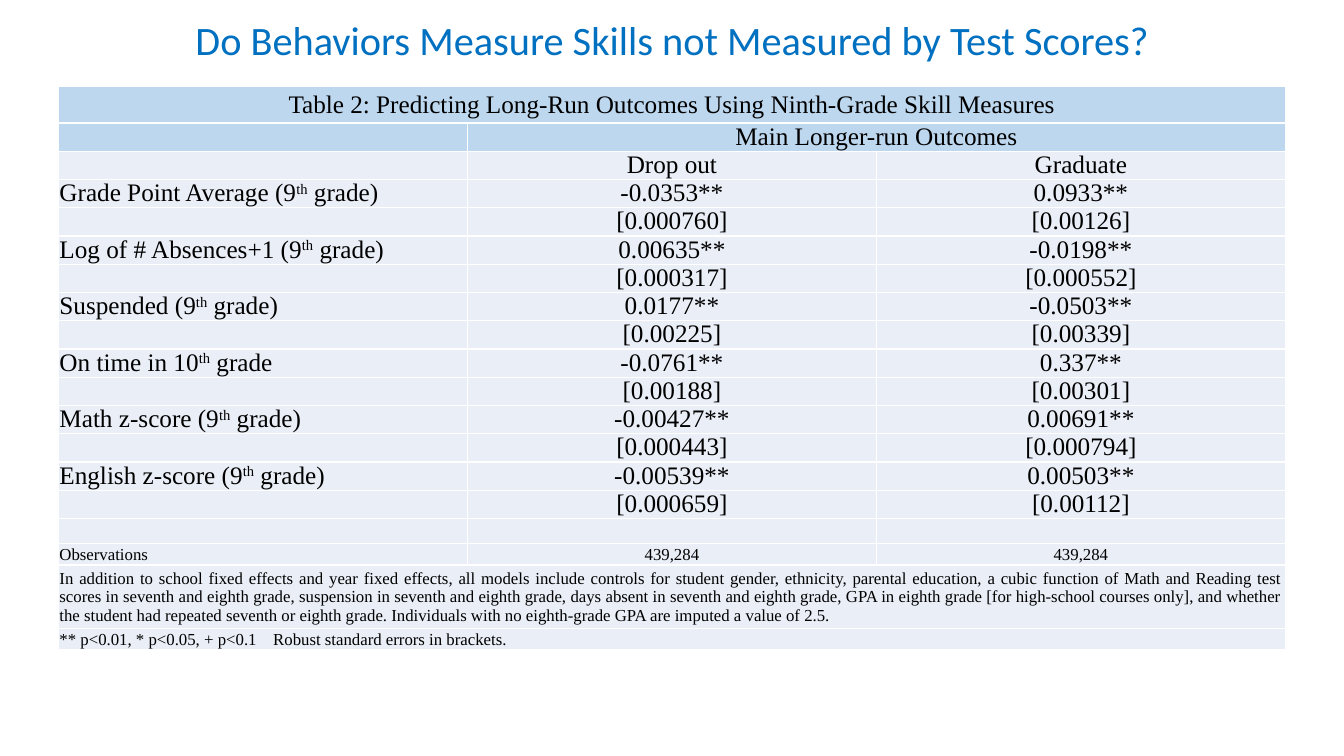
from pptx import Presentation
from pptx.dml.color import RGBColor
from pptx.enum.text import MSO_ANCHOR, PP_ALIGN
from pptx.oxml import parse_xml
from pptx.oxml.ns import nsdecls
from pptx.util import Inches, Pt

LEFT, MID, JUST = PP_ALIGN.LEFT, PP_ALIGN.CENTER, PP_ALIGN.JUSTIFY
MIDDLE = MSO_ANCHOR.MIDDLE
COLORS = {"title": "0070C0", "text": "000000", "line": "FFFFFF",
          "head": "BDD7EE", "body": "EAEFF7"}
SERIF = "Times New Roman"
BIG, SMALL = 18, 12
WIDTH = 12.17

# Label before and after the raised "th", then value and error per outcome
MODELS = [
    ("Grade Point Average (9", " grade)",
     ("-0.0353**", "0.0933**"), ("[0.000760]", "[0.00126]")),
    ("Log of # Absences+1 (9", " grade)",
     ("0.00635**", "-0.0198**"), ("[0.000317]", "[0.000552]")),
    ("Suspended (9", " grade)",
     ("0.0177**", "-0.0503**"), ("[0.00225]", "[0.00339]")),
    ("On time in 10", " grade",
     ("-0.0761**", "0.337**"), ("[0.00188]", "[0.00301]")),
    ("Math z-score (9", " grade)",
     ("-0.00427**", "0.00691**"), ("[0.000443]", "[0.000794]")),
    ("English z-score (9", " grade)",
     ("-0.00539**", "0.00503**"), ("[0.000659]", "[0.00112]")),
]
NOTE = (
    "In addition to school fixed effects and year fixed effects, all models "
    "include controls for student gender, ethnicity, parental education, a "
    "cubic function of Math and Reading test scores in seventh and eighth "
    "grade, suspension in seventh and eighth grade, days absent in seventh "
    "and eighth grade, GPA in eighth grade [for high-school courses only], "
    "and whether the student had repeated seventh or eighth grade. "
    "Individuals with no eighth-grade GPA are imputed a value of 2.5.")
KEY = "** p<0.01, * p<0.05, + p<0.1\tRobust standard errors in brackets."
HEIGHTS = [0.36] + [0.28] * 14 + [0.25, 0.21, 0.63, 0.21]


def add_run(para, text, size, font=SERIF, color="text", base=0):
    run = para.add_run()
    run.text = text
    run.font.size = Pt(size)
    run.font.name = font
    run.font.color.rgb = RGBColor.from_string(COLORS[color])
    if base:
        run.font._element.set("baseline", str(base * 1000))


def add_title(slide, text):
    box = slide.shapes.add_textbox(Inches(0.52), Inches(0.15),
                                   Inches(12.3), Inches(0.54))
    frame = box.text_frame
    frame.word_wrap = True
    frame.vertical_anchor = MIDDLE
    para = frame.paragraphs[0]
    para.alignment = MID
    para.line_spacing = 0.9
    add_run(para, text, 28.8, "Calibri", "title")


def style_cell(cell, fill):
    cell.fill.solid()
    cell.fill.fore_color.rgb = RGBColor.from_string(COLORS[fill])
    cell.vertical_anchor = MIDDLE
    cell.margin_left = cell.margin_top = cell.margin_right = Inches(0.01)
    cell.margin_bottom = 0
    # White borders come before the fill
    props = cell._tc.get_or_add_tcPr()
    for spot, side in enumerate("LRTB"):
        props.insert(spot, parse_xml(
            f'<a:ln{side} {nsdecls("a")} w="12700"><a:solidFill>'
            f'<a:srgbClr val="{COLORS["line"]}"/></a:solidFill></a:ln{side}>'))
    # Keep empty cells from growing their row
    cell.text_frame.paragraphs[0]._p.append(parse_xml(
        f'<a:endParaRPr {nsdecls("a")} sz="{SMALL * 100}"/>'))


def write(cell, text, size=BIG, align=MID, space=0.9):
    para = cell.text_frame.paragraphs[0]
    para.alignment = align
    para.line_spacing = space
    add_run(para, text, size)
    return para


def write_small(cell, text, align=MID):
    return write(cell, text, SMALL, align, 1.0)


def add_grid(slide):
    frame = slide.shapes.add_table(len(HEIGHTS), 3, Inches(0.58), Inches(0.86),
                                   Inches(WIDTH), Inches(sum(HEIGHTS)))
    table = frame.table
    table.first_row = table.horz_banding = False
    for col in table.columns:
        col.width = Inches(WIDTH / 3)
    for num, high in enumerate(HEIGHTS):
        table.rows[num].height = Inches(high)
        for cell in table.rows[num].cells:
            style_cell(cell, "head" if num < 2 else "body")
    # Full-width rows and the outcome heading
    for row, col in ((0, 0), (1, 1), (17, 0), (18, 0)):
        table.cell(row, col).merge(table.cell(row, 2))
    return table


def fill_grid(table):
    # Headings
    write(table.cell(0, 0),
          "Table 2: Predicting Long-Run Outcomes Using Ninth-Grade Skill Measures",
          space=1.0)
    write(table.cell(1, 1), "Main Longer-run Outcomes")
    for col, name in enumerate(("Drop out", "Graduate"), 1):
        write(table.cell(2, col), name)
        write_small(table.cell(16, col), "439,284")

    # Two rows for each skill measure
    for num, (start, end, values, errors) in enumerate(MODELS):
        row = 3 + 2 * num
        para = write(table.cell(row, 0), start, align=LEFT)
        add_run(para, "th", BIG, base=30)
        add_run(para, end, BIG)
        for col in (1, 2):
            write(table.cell(row, col), values[col - 1])
            write(table.cell(row + 1, col), errors[col - 1])

    # Notes
    write_small(table.cell(16, 0), "Observations", LEFT)
    write_small(table.cell(17, 0), NOTE, JUST)
    table.cell(17, 0).margin_right = Inches(0.02)
    para = write_small(table.cell(18, 0), KEY, JUST)
    para._p.get_or_add_pPr().append(parse_xml(
        f'<a:tabLst {nsdecls("a")}><a:tab pos="{Inches(2.12)}" algn="l"/>'
        '</a:tabLst>'))


def main():
    deck = Presentation()
    deck.slide_width, deck.slide_height = Inches(13.33), Inches(7.5)
    slide = deck.slides.add_slide(deck.slide_layouts[6])
    add_title(slide, "Do Behaviors Measure Skills not Measured by Test Scores?")
    fill_grid(add_grid(slide))
    deck.save("out.pptx")


if __name__ == "__main__":
    main()
